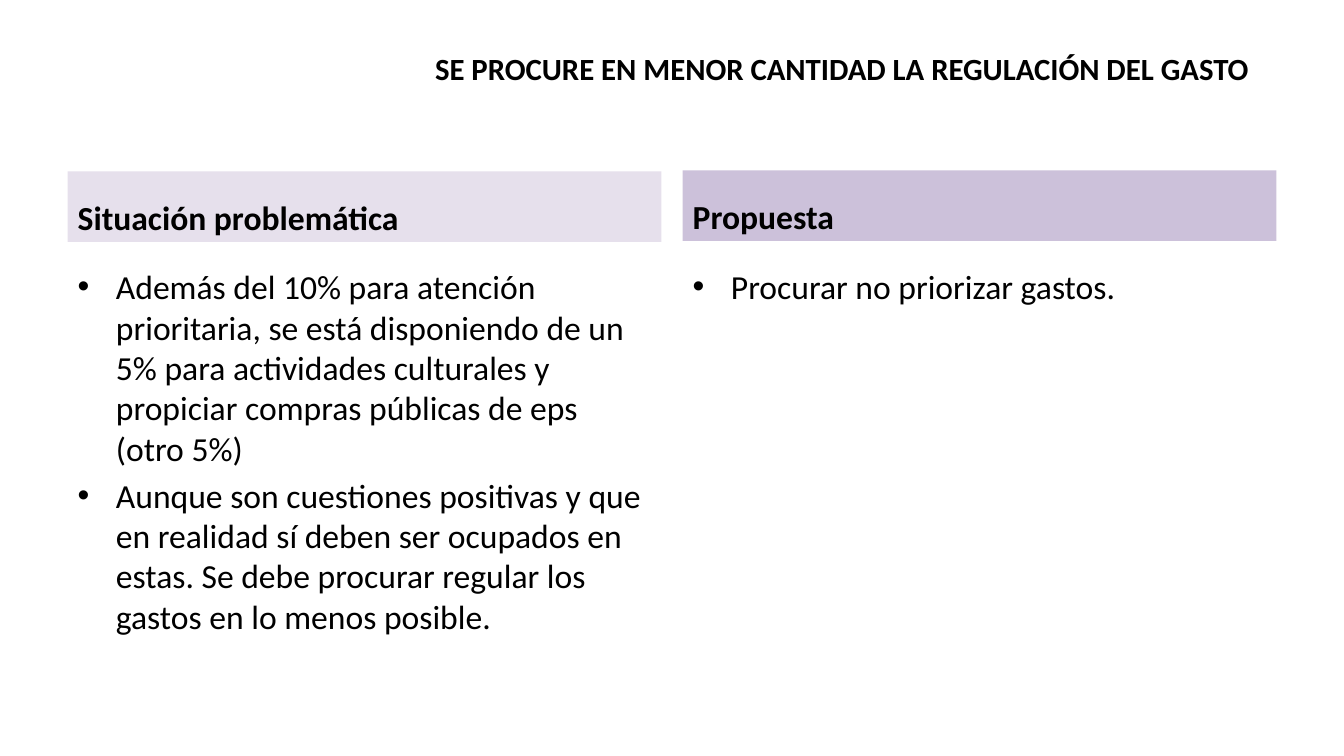
from dataclasses import dataclass

from pptx import Presentation
from pptx.dml.color import RGBColor
from pptx.enum.text import MSO_ANCHOR, MSO_AUTO_SIZE, PP_ALIGN
from pptx.oxml.ns import qn
from pptx.util import Inches, Pt
from lxml import etree


@dataclass(frozen=True)
class Theme:
    font: str = "Calibri"
    text: str = "000000"
    problem_fill: str = "E6E0EC"
    proposal_fill: str = "CCC1DA"
    title_size: int = 22
    body_size: int = 24
    item_gap: float = 4.8
    bullet_indent: float = 0.38


class ComparisonSlide:
    def __init__(self, presentation, theme):
        self.theme = theme
        self.slide = presentation.slides.add_slide(presentation.slide_layouts[4])

    def place(self, index, box, anchor):
        shape = self.slide.placeholders[index]
        shape.left, shape.top, shape.width, shape.height = map(Inches, box)
        text_frame = shape.text_frame
        text_frame.word_wrap = True
        text_frame.auto_size = MSO_AUTO_SIZE.NONE
        text_frame.vertical_anchor = anchor
        return shape

    def style(self, paragraph, size, bold=False):
        for run in paragraph.runs:
            run.font.name = self.theme.font
            run.font.size = Pt(size)
            run.font.bold = bold
            run.font.color.rgb = RGBColor.from_string(self.theme.text)

    def title(self, text, box):
        text_frame = self.place(0, box, MSO_ANCHOR.MIDDLE).text_frame
        text_frame.margin_bottom = Inches(0.42)  # lifts the line above the middle
        text_frame.text = text
        paragraph = text_frame.paragraphs[0]
        paragraph.alignment = PP_ALIGN.CENTER
        self.style(paragraph, self.theme.title_size, bold=True)

    def heading(self, index, text, box, fill):
        shape = self.place(index, box, MSO_ANCHOR.BOTTOM)
        shape.fill.solid()
        shape.fill.fore_color.rgb = RGBColor.from_string(fill)
        shape.text_frame.text = text
        paragraph = shape.text_frame.paragraphs[0]
        paragraph.space_before = Pt(0)
        self.style(paragraph, self.theme.body_size, bold=True)

    def bullets(self, index, items, box):
        text_frame = self.place(index, box, MSO_ANCHOR.TOP).text_frame
        text_frame.text = "\n".join(items)
        indent = Inches(self.theme.bullet_indent)
        for number, paragraph in enumerate(text_frame.paragraphs):
            properties = paragraph._p.get_or_add_pPr()
            properties.set("marL", str(indent))
            properties.set("indent", str(-indent))
            etree.SubElement(properties, qn("a:buChar")).set("char", "•")
            paragraph.space_before = Pt(self.theme.item_gap if number else 0)
            self.style(paragraph, self.theme.body_size)


def main():
    presentation = Presentation()
    presentation.slide_width = Inches(13.33)
    presentation.slide_height = Inches(7.5)
    theme = Theme()
    page = ComparisonSlide(presentation, theme)

    # Title
    page.title("SE PROCURE EN MENOR CANTIDAD LA REGULACIÓN DEL GASTO",
               (4.04, 0.24, 8.62, 1.25))

    # Two columns: heading placeholder, left, top, fill, heading, items
    columns = [
        (1, 0.67, 1.7, theme.problem_fill, "Situación problemática", [
            "Además del 10% para atención prioritaria, se está disponiendo de un 5% "
            "para actividades culturales y propiciar compras públicas de eps (otro 5%)",
            "Aunque son cuestiones positivas y que en realidad sí deben ser ocupados "
            "en estas. Se debe procurar regular los gastos en lo menos posible.",
        ]),
        (3, 6.77, 1.69, theme.proposal_fill, "Propuesta",
         ["Procurar no priorizar gastos."]),
    ]
    column_width = 5.89
    for index, left, top, fill, heading, items in columns:
        page.heading(index, heading, (left, top, column_width, 0.7), fill)
        page.bullets(index + 1, items, (left, 2.59, column_width, 4.11))

    presentation.save("out.pptx")


if __name__ == "__main__":
    main()
